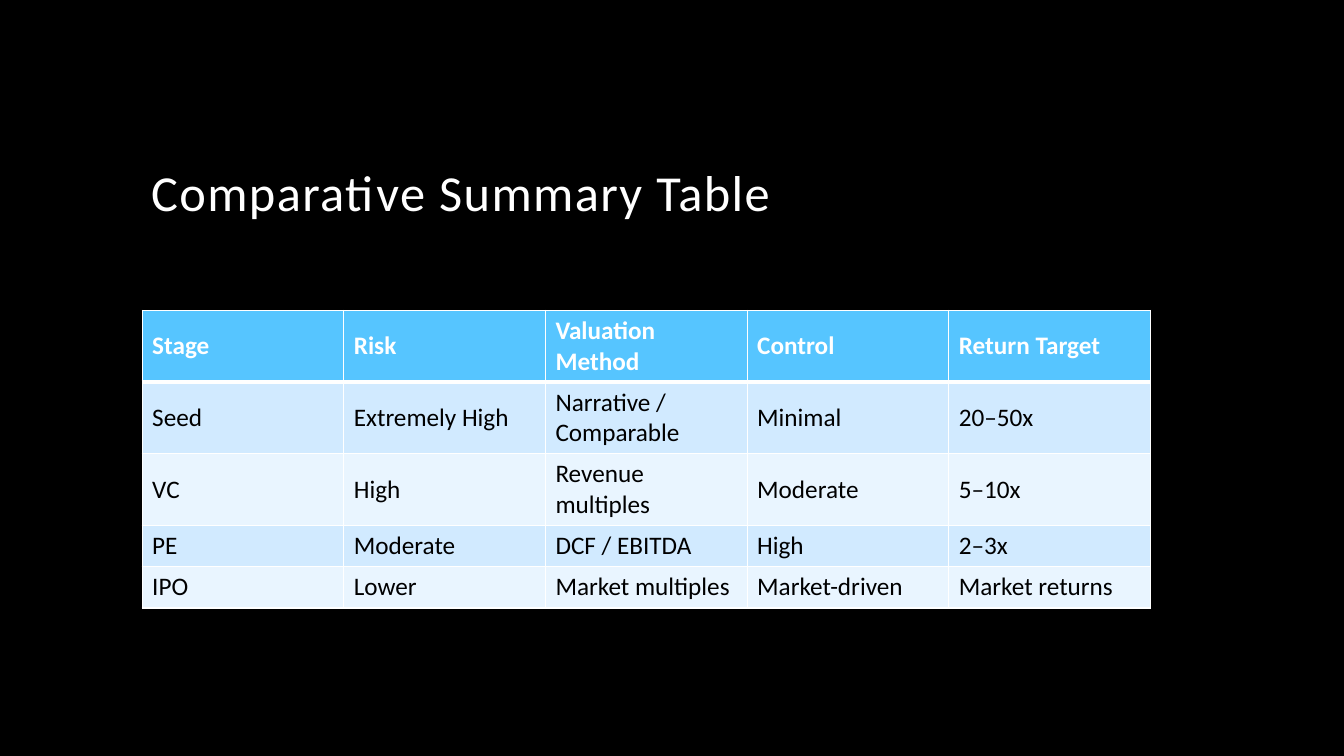
from lxml import etree
from pptx import Presentation
from pptx import util as u
from pptx.dml.color import RGBColor
from pptx.enum import text
from pptx.oxml import ns

BLACK = RGBColor(0x00, 0x00, 0x00)
WHITE = RGBColor(0xFF, 0xFF, 0xFF)
HEADER_BLUE = RGBColor(0x56, 0xC5, 0xFF)
BAND_FILLS = [RGBColor(0xE9, 0xF5, 0xFF), RGBColor(0xD1, 0xEA, 0xFF)]
FONT = "Calibri"
COLUMN_WIDTH = u.Inches(2)
ROW_HEIGHT = u.Inches(0.41)

SUMMARY = [
    ["Stage", "Risk", "Valuation Method", "Control", "Return Target"],
    ["Seed", "Extremely High", "Narrative / Comparable", "Minimal", "20–50x"],
    ["VC", "High", "Revenue multiples", "Moderate", "5–10x"],
    ["PE", "Moderate", "DCF / EBITDA", "High", "2–3x"],
    ["IPO", "Lower", "Market multiples", "Market-driven", "Market returns"],
]


def add_run(paragraph, words, size, color, bold=False):
    run = paragraph.add_run()
    run.text = words
    run.font.name = FONT
    run.font.size = u.Pt(size)
    run.font.bold = bold
    run.font.color.rgb = color
    return run


def add_border(cell, side, points):
    properties = cell._tc.get_or_add_tcPr()
    line = etree.SubElement(properties, ns.qn(f"a:ln{side}"), w=str(u.Pt(points)))
    fill = etree.SubElement(line, ns.qn("a:solidFill"))
    etree.SubElement(fill, ns.qn("a:srgbClr"), val=str(WHITE))


presentation = Presentation()
presentation.slide_width = u.Inches(13.33)
presentation.slide_height = u.Inches(7.5)
slide = presentation.slides.add_slide(presentation.slide_layouts[5])
slide.background.fill.solid()
slide.background.fill.fore_color.rgb = BLACK

title = slide.shapes.title
title.left, title.top = u.Inches(1.4), u.Inches(0.76)
title.width, title.height = u.Inches(10), u.Inches(1.5)
title.text_frame.vertical_anchor = text.MSO_ANCHOR.BOTTOM
title.text_frame.word_wrap = True
paragraph = title.text_frame.paragraphs[0]
paragraph.alignment = text.PP_ALIGN.LEFT
paragraph.line_spacing = 0.9
title_run = add_run(paragraph, "Comparative Summary Table", 36, WHITE)
title_run.font._element.set("spc", "100")

row_count, column_count = len(SUMMARY), len(SUMMARY[0])
table = slide.shapes.add_table(
    row_count, column_count, u.Inches(1.41), u.Inches(3.08),
    COLUMN_WIDTH * column_count, ROW_HEIGHT * row_count,
).table

for row_index, row in enumerate(SUMMARY):
    table.rows[row_index].height = ROW_HEIGHT
    is_header = row_index == 0
    for column_index, words in enumerate(row):
        cell = table.cell(row_index, column_index)
        cell.vertical_anchor = text.MSO_ANCHOR.MIDDLE
        add_border(cell, "L", 1)
        add_border(cell, "R", 1)
        add_border(cell, "T", 3 if row_index == 1 else 1)
        add_border(cell, "B", 3 if is_header else 1)
        cell.fill.solid()
        cell.fill.fore_color.rgb = HEADER_BLUE if is_header else BAND_FILLS[row_index % 2]
        add_run(cell.text_frame.paragraphs[0], words, 18,
                WHITE if is_header else BLACK, is_header)

presentation.save("out.pptx")
